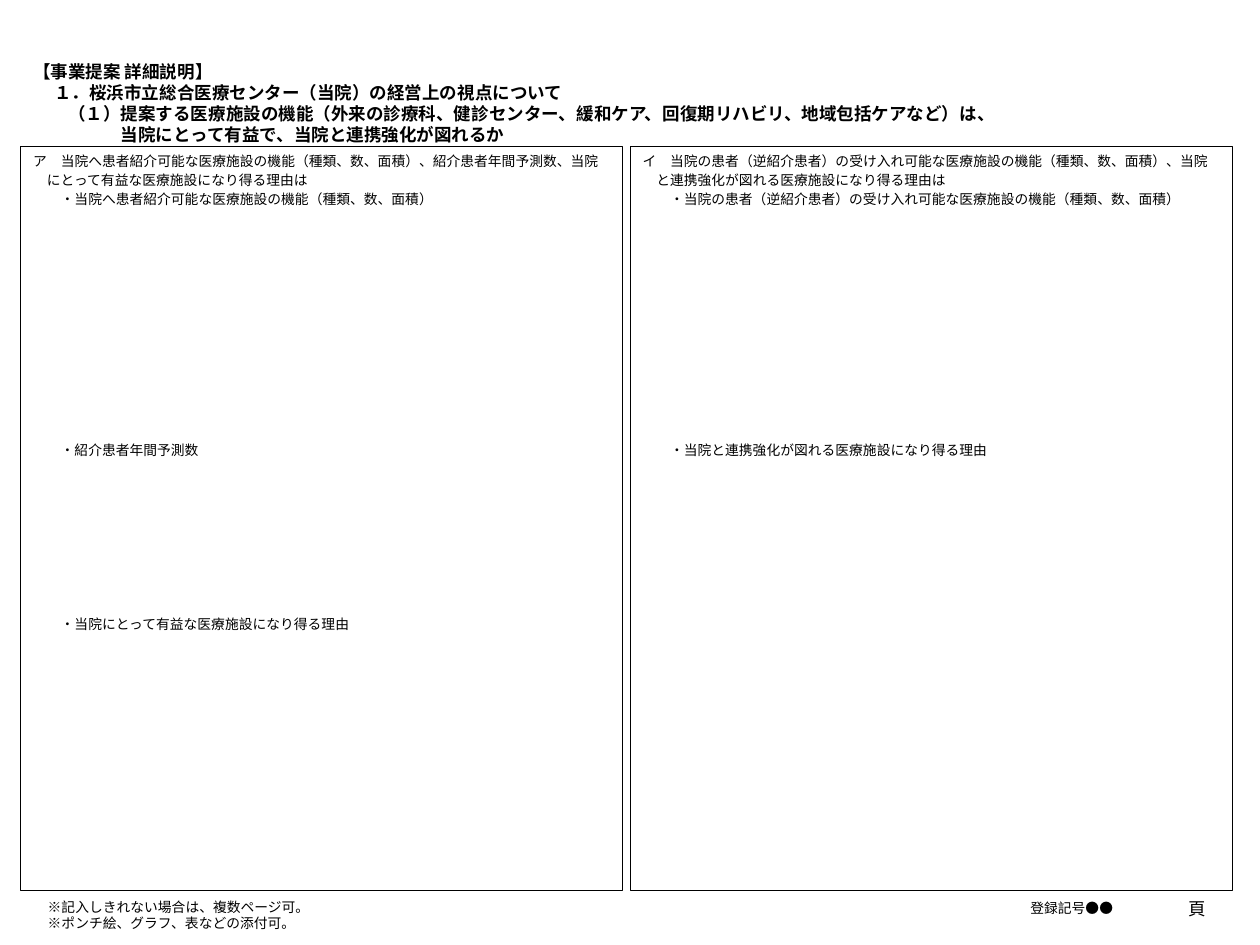
"""Build the proposal form slide with two framed answer columns."""
from pptx import Presentation
from pptx.dml.color import RGBColor
from pptx.enum.shapes import MSO_SHAPE
from pptx.enum.text import MSO_ANCHOR, MSO_AUTO_SIZE, PP_ALIGN
from pptx.oxml.ns import qn
from pptx.util import Inches, Pt
from lxml.etree import SubElement

WIDE, HIGH = Inches(14), Inches(10.5)
FONT = "Noto Sans CJK JP"
INKS = {"text": "000000", "line": "000000"}
PITCH = {14: 16.8, 11: 12.9}
GAP = 2.55
LEFT, RIGHT = PP_ALIGN.LEFT, PP_ALIGN.RIGHT

TITLE = [
    ("【事業提案 詳細説明】", 0, 0),
    ("１．桜浜市立総合医療センター（当院）の経営上の視点について", 1.2, 0),
    ("（１）提案する医療施設の機能（外来の診療科、健診センター、緩和ケア、"
     "回復期リハビリ、地域包括ケアなど）は、", 2, 0),
    ("当院にとって有益で、当院と連携強化が図れるか", 5, 0),
]
PANELS = [
    [("ア　当院へ患者紹介可能な医療施設の機能（種類、数、面積）、紹介患者年間予測数、当院", 0, 0),
     ("にとって有益な医療施設になり得る理由は", 1, 0),
     ("・当院へ患者紹介可能な医療施設の機能（種類、数、面積）", 2, 0),
     ("・紹介患者年間予測数", 2, 12),
     ("・当院にとって有益な医療施設になり得る理由", 2, 8)],
    [("イ　当院の患者（逆紹介患者）の受け入れ可能な医療施設の機能（種類、数、面積）、当院", 0, 0),
     ("と連携強化が図れる医療施設になり得る理由は", 1, 0),
     ("・当院の患者（逆紹介患者）の受け入れ可能な医療施設の機能（種類、数、面積）", 2, 0),
     ("・当院と連携強化が図れる医療施設になり得る理由", 2, 12)],
]
NOTES = [
    ((57.71, 93.43, 31.64, 5.33), ["登録記号●●"], 11, RIGHT),
    ((2.79, 94.19, 49.5, 5.33),
     ["※記入しきれない場合は、複数ページ可。", "※ポンチ絵、グラフ、表などの添付可。"], 11, LEFT),
    ((91.07, 93.43, 5.64, 5.33), ["頁"], 14, RIGHT),
]


def place(left, top, width, height):
    """Turn percentages of the slide into lengths."""
    return [round(part * full / 100) for part, full in
            ((left, WIDE), (top, HIGH), (width, WIDE), (height, HIGH))]


def write(shape, lines, size, anchor, align=LEFT, bold=False, gap=0):
    """Fill a shape with lines of (text, indent in characters, skipped rows)."""
    frame = shape.text_frame
    look = {"word_wrap": True, "auto_size": MSO_AUTO_SIZE.NONE,
            "vertical_anchor": anchor,
            "margin_left": Inches(0.14), "margin_right": Inches(0.14),
            "margin_top": Inches(0.07), "margin_bottom": Inches(0.07)}
    for name, value in look.items():
        setattr(frame, name, value)
    for row, (text, indent, skip) in enumerate(lines):
        para = frame.add_paragraph() if row else frame.paragraphs[0]
        before = gap + skip * (PITCH[size] + gap) if row else 0
        rules = {"alignment": align, "line_spacing": Pt(PITCH[size]),
                 "space_before": Pt(before), "space_after": Pt(0)}
        for name, value in rules.items():
            setattr(para, name, value)
        props = para._p.get_or_add_pPr()
        props.set("marL", str(Pt(indent * size)))
        props.set("indent", "0")
        run = para.add_run()
        run.text = text
        for name, value in {"name": FONT, "size": Pt(size), "bold": bold}.items():
            setattr(run.font, name, value)
        run.font.color.rgb = RGBColor.from_string(INKS["text"])
        SubElement(run._r.get_or_add_rPr(), qn("a:ea")).set("typeface", FONT)


def head(slide):
    """Set the title in its placeholder."""
    title = slide.shapes.title
    spot = zip(("left", "top", "width", "height"), place(1.64, 5.71, 95.64, 10.48))
    for name, value in spot:
        setattr(title, name, value)
    write(title, TITLE, 14, MSO_ANCHOR.MIDDLE, bold=True)


def panel(slide, left, lines):
    """Draw one framed answer column."""
    box = slide.shapes.add_shape(MSO_SHAPE.RECTANGLE, *place(left, 15.52, 47.79, 78.76))
    box.shadow.inherit = False
    box.fill.background()
    box.line.color.rgb = RGBColor.from_string(INKS["line"])
    box.line.width = Pt(0.75)
    write(box, lines, 11, MSO_ANCHOR.TOP, gap=GAP)


def note(slide, spot, texts, size, align):
    """Add a small footer text."""
    box = slide.shapes.add_textbox(*place(*spot))
    write(box, [(text, 0, 0) for text in texts], size, MSO_ANCHOR.MIDDLE, align)


def main():
    """Build and save the slide."""
    deck = Presentation()
    deck.slide_width, deck.slide_height = WIDE, HIGH
    slide = deck.slides.add_slide(deck.slide_layouts[5])
    head(slide)
    for left, lines in zip((1.64, 50), PANELS):
        panel(slide, left, lines)
    for item in NOTES:
        note(slide, *item)
    deck.save("out.pptx")


if __name__ == "__main__":
    main()
